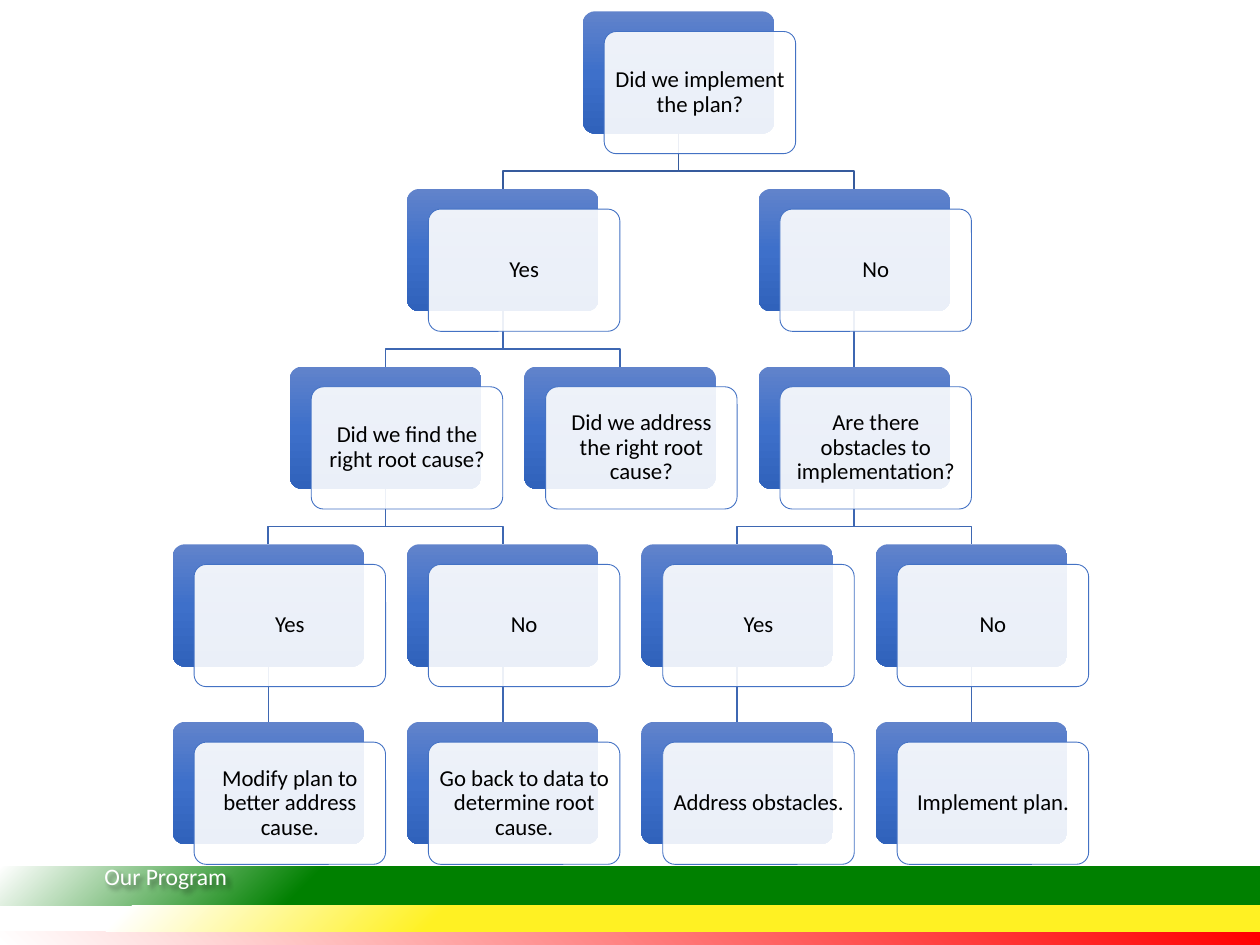
from dataclasses import dataclass

from lxml.etree import SubElement
from pptx import Presentation
from pptx.dml.color import RGBColor
from pptx.enum.shapes import MSO_CONNECTOR, MSO_SHAPE
from pptx.enum.text import MSO_ANCHOR, PP_ALIGN
from pptx.oxml import parse_xml
from pptx.oxml.ns import nsdecls, qn
from pptx.util import Inches, Pt


@dataclass(frozen=True)
class Theme:
    font: str = "Calibri"
    node_size: float = 13
    footer_size: float = 13.5
    text: str = "000000"
    white: str = "FFFFFF"
    card_line: str = "4472C4"
    root_link: str = "365B9D"
    link: str = "3E67B2"
    plate: tuple = ((0, "6183CB"), (50, "3E70CA"), (100, "3062BB"))


THEME = Theme()
FOOTER = "Our Program"
NODES = [
    ("Did we implement the plan?", 0, 3.5, None),
    ("Yes", 1, 2, 0),
    ("No", 1, 5, 0),
    ("Did we find the right root cause?", 2, 1, 1),
    ("Did we address the right root cause?", 2, 3, 1),
    ("Are there obstacles to implementation?", 2, 5, 2),
    ("Yes", 3, 0, 3),
    ("No", 3, 2, 3),
    ("Yes", 3, 4, 5),
    ("No", 3, 6, 5),
    ("Modify plan to better address cause.", 4, 0, 6),
    ("Go back to data to determine root cause.", 4, 2, 7),
    ("Address obstacles.", 4, 4, 8),
    ("Implement plan.", 4, 6, 9),
]
BANDS = [
    (7.39, 0.12, ((0, "FF0000"), (100, "FFFFFF")), 0),
    (6.88, 0.31, ((75, "008000"), (100, "FFFFFF")), 100),
    (7.19, 0.20, ((65, "FFF123"), (90, "FFFFFF")), 100),
]
GRID_LEFT, GRID_TOP = 1.37, 0.09
COLUMN_STEP, ROW_STEP = 0.93, 1.41
NODE_WIDTH, NODE_HEIGHT = 1.52, 0.97
CARD_OFFSET = 0.17, 0.16
ELBOW_SHARE = 0.68


def color(value):
    return RGBColor.from_string(value)


def set_gradient(shape, stops, direction):
    stop_xml = "".join(
        f'<a:gs pos="{position * 1000}"><a:srgbClr val="{value}"/></a:gs>'
        for position, value in stops
    )
    shape.fill.gradient()
    old_fill = shape._element.spPr.find(qn("a:gradFill"))
    new_fill = parse_xml(
        f'<a:gradFill {nsdecls("a")} rotWithShape="1">'
        f"<a:gsLst>{stop_xml}</a:gsLst>{direction}</a:gradFill>"
    )
    old_fill.getparent().replace(old_fill, new_fill)


def add_box(slide, kind, left, top, width, height):
    shape = slide.shapes.add_shape(
        kind, Inches(left), Inches(top), Inches(width), Inches(height)
    )
    shape.shadow.inherit = False
    shape.line.fill.background()
    if kind == MSO_SHAPE.ROUNDED_RECTANGLE:
        shape.adjustments[0] = 0.1
    return shape


def add_run(paragraph, text, size, value):
    run = paragraph.add_run()
    run.text = text
    run.font.name = THEME.font
    run.font.size = Pt(size)
    run.font.color.rgb = color(value)


def add_footer(slide):
    for top, height, stops, focus in BANDS:
        band = add_box(slide, MSO_SHAPE.RECTANGLE, 0, top, 10, height)
        direction = (
            f'<a:path path="circle"><a:fillToRect l="100000" t="{focus * 1000}" '
            f'r="0" b="{(100 - focus) * 1000}"/></a:path>'
        )
        set_gradient(band, stops, direction)
    label = slide.shapes.add_textbox(
        Inches(0.73), Inches(6.79), Inches(1.92), Inches(0.33)
    )
    label.text_frame.word_wrap = True
    add_run(label.text_frame.paragraphs[0], FOOTER, THEME.footer_size, THEME.white)
    label._element.spPr.append(parse_xml(
        f'<a:effectLst {nsdecls("a")}><a:outerShdw blurRad="38100" dist="38100" '
        'dir="2700000"><a:srgbClr val="000000"><a:alpha val="43000"/>'
        "</a:srgbClr></a:outerShdw></a:effectLst>"
    ))


def node_origin(row, column):
    return GRID_LEFT + column * COLUMN_STEP, GRID_TOP + row * ROW_STEP


def add_plate(slide, row, column):
    plate = add_box(
        slide, MSO_SHAPE.ROUNDED_RECTANGLE, *node_origin(row, column),
        NODE_WIDTH, NODE_HEIGHT,
    )
    set_gradient(plate, THEME.plate, '<a:lin ang="5400000" scaled="0"/>')
    return plate


def add_link(slide, parent, child, value):
    start_x = parent.left + parent.width // 2
    end_x = child.left + child.width // 2
    start_y = parent.top + parent.height
    if start_x == end_x:
        link = slide.shapes.add_connector(
            MSO_CONNECTOR.STRAIGHT, start_x, start_y, end_x, child.top
        )
        link.begin_connect(parent, 2)
        link.end_connect(child, 0)
        SubElement(link._element.spPr, qn("a:effectLst"))
    else:
        elbow_y = start_y + int((child.top - start_y) * ELBOW_SHARE)
        builder = slide.shapes.build_freeform(start_x, start_y)
        builder.add_line_segments(
            [(start_x, elbow_y), (end_x, elbow_y), (end_x, child.top)], close=False
        )
        link = builder.convert_to_shape()
        link.fill.background()
        link.shadow.inherit = False
    link.line.color.rgb = color(value)
    link.line.width = Pt(1)


def add_card(slide, text, row, column):
    left, top = node_origin(row, column)
    card = add_box(
        slide, MSO_SHAPE.ROUNDED_RECTANGLE, left + CARD_OFFSET[0],
        top + CARD_OFFSET[1], NODE_WIDTH, NODE_HEIGHT,
    )
    card.fill.solid()
    card.fill.fore_color.rgb = color(THEME.white)
    fill_color = card._element.spPr.find(qn("a:solidFill")).find(qn("a:srgbClr"))
    SubElement(fill_color, qn("a:alpha"), val="90000")
    card.line.color.rgb = color(THEME.card_line)
    card.line.width = Pt(0.5)
    frame = card.text_frame
    frame.word_wrap = True
    frame.vertical_anchor = MSO_ANCHOR.MIDDLE
    frame.margin_left = frame.margin_right = Inches(0.05)
    frame.margin_top = frame.margin_bottom = Inches(0.05)
    paragraph = frame.paragraphs[0]
    paragraph.alignment = PP_ALIGN.CENTER
    paragraph.line_spacing = 0.9
    add_run(paragraph, text, THEME.node_size, THEME.text)


def main():
    presentation = Presentation()
    presentation.slide_width, presentation.slide_height = Inches(10), Inches(7.5)
    slide = presentation.slides.add_slide(presentation.slide_layouts[6])
    add_footer(slide)
    plates = [add_plate(slide, row, column) for _, row, column, _ in NODES]
    for plate, (_, row, _, parent) in zip(plates, NODES):
        if parent is not None:
            value = THEME.root_link if row == 1 else THEME.link
            add_link(slide, plates[parent], plate, value)
    for text, row, column, _ in NODES:
        add_card(slide, text, row, column)
    presentation.save("out.pptx")


if __name__ == "__main__":
    main()
